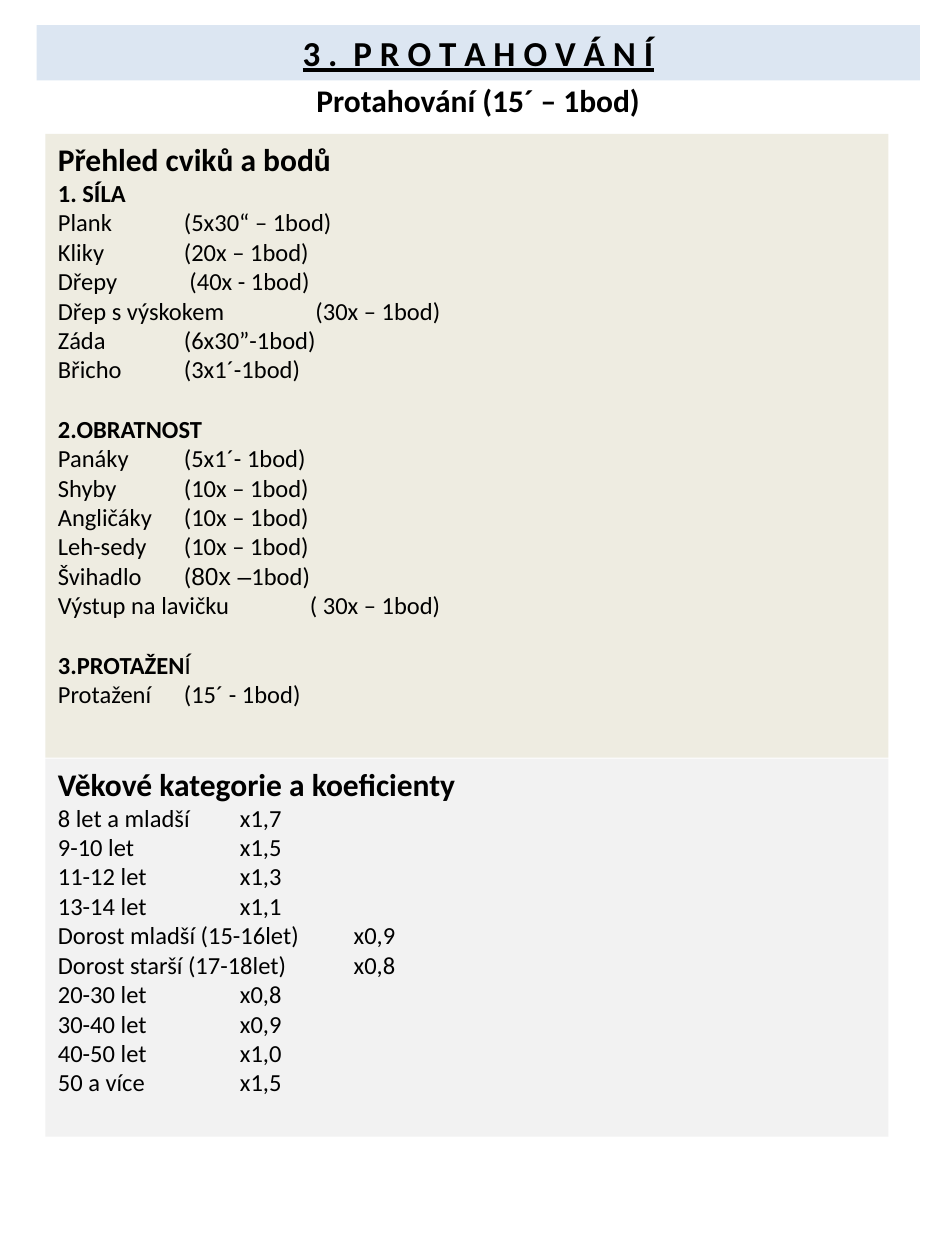
from lxml import etree
from pptx import Presentation
from pptx.dml.color import RGBColor
from pptx.enum import shapes, text
from pptx.oxml import ns
from pptx.util import Pt

BLACK = RGBColor(0x00, 0x00, 0x00)
BLUE = RGBColor(0xDC, 0xE6, 0xF2)
SAND = RGBColor(0xEE, 0xEC, 0xE1)
GREY = RGBColor(0xF2, 0xF2, 0xF2)

LINE = 17.1
BOLD = {"bold": True}

EXERCISES = [
    ([("1. SÍLA", BOLD)], [
        [("Plank\t(5x30“ – 1bod)", {})],
        [("Kliky\t(20x – 1bod)", {})],
        [("Dřepy\t (40x - 1bod)", {})],
        [("Dřep s výskokem\t (30x – 1bod)", {})],
        [("Záda\t(6x30”-1bod)", {})],
        [("Břicho\t(3x1´-1bod)", {})],
    ]),
    ([("2.OBRATNOST", BOLD)], [
        [("Panáky\t(5x1´- 1bod)", {})],
        [("Shyby\t(10x – 1bod)", {})],
        [("Angličáky\t(10x – 1bod)", {})],
        [("Leh-sedy\t(10x – 1bod)", {})],
        [("Švihadlo\t(", {}), ("80x –", {"font": "Arial"}), ("1bod)", {})],
        [("Výstup na lavičku\t( 30x – 1bod)", {})],
    ]),
    ([("3.PROTAŽEN", BOLD), ("Í", {})], [
        [("Protažení\t(15´ - 1bod)", {})],
    ]),
]

COEFFICIENTS = [
    ("8 let a mladší", "x1,7"),
    ("9-10 let", "x1,5"),
    ("11-12 let", "x1,3"),
    ("13-14 let", "x1,1"),
    ("Dorost mladší (15-16let)", "x0,9"),
    ("Dorost starší (17-18let)", "x0,8"),
    ("20-30 let", "x0,8"),
    ("30-40 let", "x0,9"),
    ("40-50 let", "x1,0"),
    ("50 a více", "x1,5"),
]


def write(paragraph, wording, size=14, bold=False, underline=False, font="Calibri"):
    run = paragraph.add_run()
    run.text = wording
    run.font.name = font
    run.font.size = Pt(size)
    run.font.bold = bold
    run.font.underline = underline
    run.font.color.rgb = BLACK


def set_tabs(paragraph, stops):
    tab_list = etree.SubElement(paragraph._p.get_or_add_pPr(), ns.qn("a:tabLst"))
    for stop in stops:
        etree.SubElement(tab_list, ns.qn("a:tab"), pos=str(Pt(stop)), algn="l")


def add_line(frame, runs, stops, gap=0):
    line = frame.add_paragraph()
    line.alignment = text.PP_ALIGN.LEFT
    line.space_before = Pt(gap)
    set_tabs(line, stops)
    for wording, look in runs:
        write(line, wording, **look)


def add_banner(slide, left, top, width, height):
    banner = slide.shapes.title
    banner.left, banner.top, banner.width, banner.height = map(Pt, (left, top, width, height))
    banner.fill.solid()
    banner.fill.fore_color.rgb = BLUE
    frame = banner.text_frame
    frame.auto_size = text.MSO_AUTO_SIZE.NONE
    frame.vertical_anchor = text.MSO_ANCHOR.TOP
    heading = frame.paragraphs[0]
    heading.alignment = text.PP_ALIGN.CENTER
    write(heading, "3 .  P R O T A H O V Á N Í", size=20, bold=True, underline=True)


def add_subtitle(slide, left, top, width, height):
    frame = slide.shapes.add_textbox(*map(Pt, (left, top, width, height))).text_frame
    frame.word_wrap = True
    subtitle = frame.paragraphs[0]
    subtitle.alignment = text.PP_ALIGN.CENTER
    write(subtitle, "Protahování (15´ – 1bod)", size=18, bold=True)


def add_panel(slide, left, top, width, height, colour, heading):
    panel = slide.shapes.add_shape(
        shapes.MSO_SHAPE.RECTANGLE, *map(Pt, (left, top, width, height)))
    panel.shadow.inherit = False
    panel.fill.solid()
    panel.fill.fore_color.rgb = colour
    panel.line.fill.background()
    frame = panel.text_frame
    frame.word_wrap = True
    frame.vertical_anchor = text.MSO_ANCHOR.TOP
    frame.paragraphs[0].alignment = text.PP_ALIGN.LEFT
    write(frame.paragraphs[0], heading, size=18, bold=True)
    return frame


def add_exercises(slide, left, top, width, height):
    frame = add_panel(slide, left, top, width, height, SAND, "Přehled cviků a bodů")
    for number, (heading, exercises) in enumerate(EXERCISES):
        add_line(frame, heading, (72, 144), gap=LINE if number else 0)
        for exercise in exercises:
            add_line(frame, exercise, (72, 144))


def add_coefficients(slide, left, top, width, height):
    frame = add_panel(slide, left, top, width, height, GREY,
                      "Věkové kategorie a koeficienty")
    for age, coefficient in COEFFICIENTS:
        add_line(frame, [(f"{age}\t{coefficient}", {})], (104, 169))


def main():
    deck = Presentation()
    deck.slide_width, deck.slide_height = Pt(540), Pt(720)
    slide = deck.slides.add_slide(deck.slide_layouts.get_by_name("Title Only"))
    add_banner(slide, 20.9, 14.4, 504.7, 31.5)
    add_subtitle(slide, 20.9, 42.5, 504.7, 29)
    add_exercises(slide, 26, 76.5, 481.7, 356.4)
    add_coefficients(slide, 26, 433.5, 481.7, 216)
    deck.save("out.pptx")


if __name__ == "__main__":
    main()
